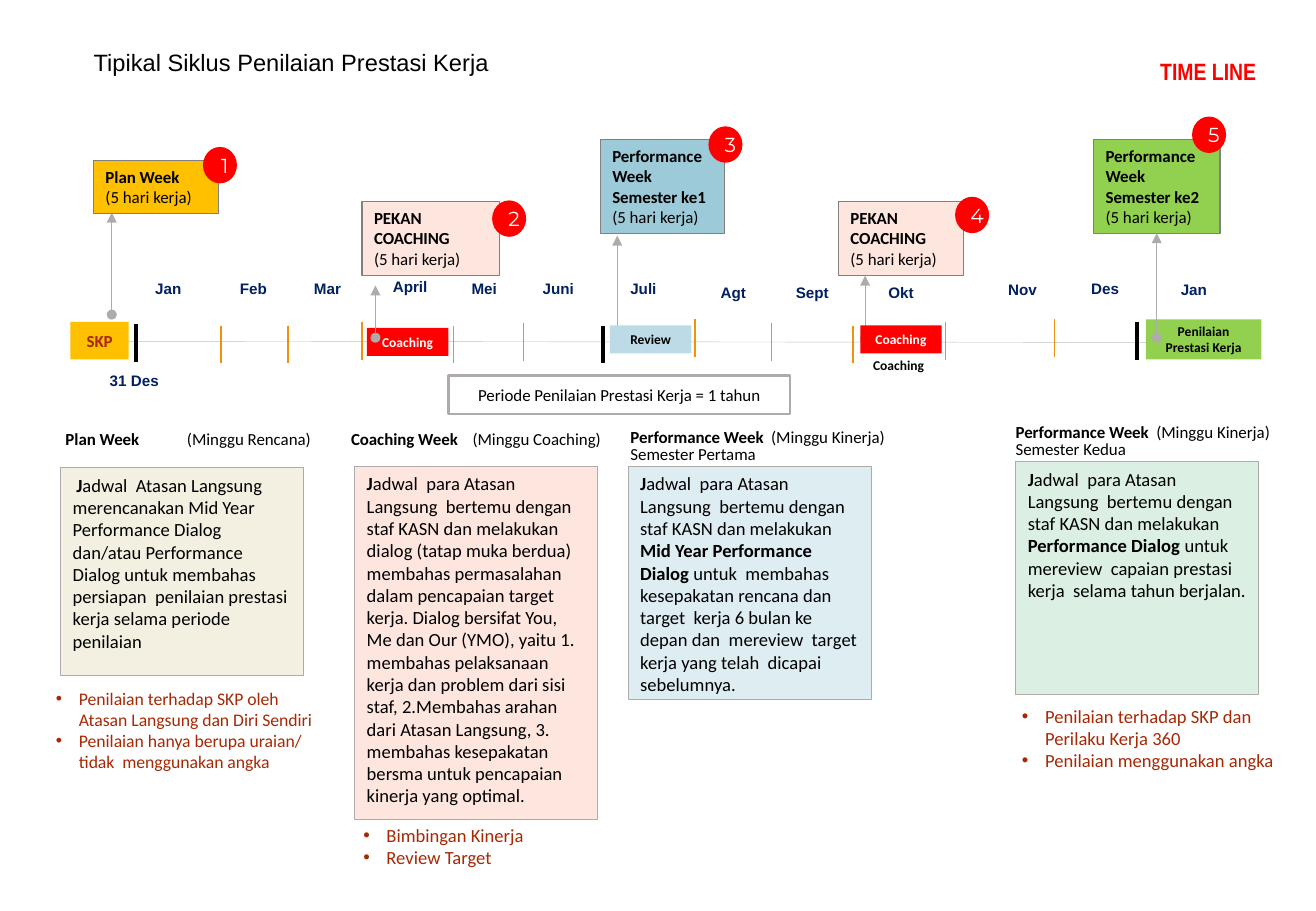
"""Build the yearly performance appraisal timeline slide."""
from itertools import zip_longest
from lxml import etree
from pptx import Presentation
from pptx import util as u
from pptx.dml.color import RGBColor
from pptx.enum import shapes, text
from pptx.oxml import ns

NAVY, RUST, RED, GRAY, ORANGE = "002060", "A62805", "FF0000", "AFABAB", "F0920F"
BLACK, WHITE, AMBER, GREEN, BLUSH = "000000", "FFFFFF", "FFC000", "92D050", "FEE5DE"
TOP, MIDDLE = text.MSO_ANCHOR.TOP, text.MSO_ANCHOR.MIDDLE
LEFT, CENTER = text.PP_ALIGN.LEFT, text.PP_ALIGN.CENTER

TITLE = ("Tipikal Siklus Penilaian Prestasi Kerja", (0.67, 0.34, 4.65, 0.34))
HEADING = ("TIME LINE", (9.45, 0.42, 1, 0.34))
PERIOD = ("Periode Penilaian Prestasi Kerja = 1 tahun", (3.69, 3.09, 2.81, 0.32))
MONTHS = [
    ("Jan", 1.1, 2.25), ("Feb", 1.8, 2.25), ("Mar", 2.41, 2.25), ("April", 3.09, 2.23),
    ("Mei", 3.7, 2.25), ("Juni", 4.31, 2.25), ("Juli", 5.01, 2.25), ("Agt", 5.75, 2.28),
    ("Sept", 6.4, 2.28), ("Okt", 7.13, 2.28), ("Nov", 8.13, 2.26), ("Des", 8.81, 2.25),
    ("Jan", 9.54, 2.26), ("31 Des", 0.82, 3.01),
]
MONTH_TICKS = [
    (1.82, 2.68), (2.37, 2.68), (2.98, 2.65), (3.73, 2.68), (4.31, 2.66), (5.72, 2.63),
    (6.35, 2.66), (7.02, 2.68), (7.78, 2.65), (8.68, 2.63),
]
PERIOD_TICKS = [(1.12, 2.67), (4.96, 2.68), (9.36, 2.65)]
CARDS = [
    (["*Plan Week*"], (0.77, 1.32, 1.03, 0.44), AMBER, (1.67, 1.21)),
    (["*PEKAN COACHING*"], (2.98, 1.66, 1.13, 0.61), BLUSH, (4.05, 1.65)),
    (["*Performance Week Semester ke1*"], (4.94, 1.15, 1.02, 0.77), "9CCAD9", (5.83, 1.04)),
    (["*PEKAN COACHING*"], (6.9, 1.66, 1.03, 0.61), BLUSH, (7.86, 1.62)),
    (["*Performance Week Semester ke2*"], (9, 1.15, 1.04, 0.77), GREEN, (9.81, 0.96)),
]
DAYS = "(5 hari kerja)"
HIDDEN_ARROWS = [(5.08, 2.8, 1.94), (7.12, 2.79, 2.27)]
VISIBLE_ARROWS = [(0.92, 2.59, 1.75), (3.09, 2.78, 2.35)]
FINAL_ARROW = (9.52, 2.78, 1.92)
STAGES = [
    ("SKP", (0.58, 2.65, 0.48, 0.31), AMBER, RUST, 10),
    ("Coaching", (3.02, 2.7, 0.67, 0.23), RED, WHITE, 8),
    ("Review", (5.02, 2.68, 0.67, 0.23), "BDDBE6", BLACK, 8),
    ("Coaching", (7.07, 2.85, 0.65, 0.31), WHITE, BLACK, 8),
    ("Coaching", (7.08, 2.68, 0.67, 0.23), RED, WHITE, 8),
    ("Penilaian Prestasi Kerja", (9.43, 2.63, 0.95, 0.33), GREEN, BLACK, 8),
]
CAPTIONS = [
    ("*Plan Week*\t(Minggu Rencana)", (0.44, 3.48, 1.98, 0.27), 0.74),
    ("*Coaching Week*\t(Minggu Coaching)", (2.79, 3.48, 2.29, 0.27), 1.01),
    ("*Performance Week*  (Minggu Kinerja) Semester Pertama", (5.09, 3.49, 2.33, 0.38), None),
    ("*Performance Week*  (Minggu Kinerja) Semester Kedua", (8.26, 3.45, 2.33, 0.38), None),
]
DETAILS = [
    ("*J*adwal  Atasan Langsung  merencanakan Mid Year Performance Dialog  dan/atau "
     "Performance Dialog untuk membahas  persiapan  penilaian prestasi kerja selama "
     "periode penilaian", (0.5, 3.85, 2, 1.71), "F3F0E1", 0.25, 0.03),
    ("*J*adwal  para Atasan Langsung  bertemu dengan staf KASN dan melakukan dialog "
     "(tatap muka berdua) membahas permasalahan dalam pencapaian target kerja. Dialog "
     "bersifat You, Me dan Our (YMO), yaitu 1. membahas pelaksanaan kerja dan problem "
     "dari sisi staf, 2.Membahas arahan dari Atasan Langsung, 3. membahas kesepakatan "
     "bersma untuk pencapaian kinerja yang optimal.", (2.92, 3.84, 2, 2.91), BLUSH, 0.5, 0),
    ("*J*adwal  para Atasan Langsung  bertemu dengan staf KASN dan melakukan *Mid Year "
     "Performance Dialog* untuk  membahas kesepakatan rencana dan target  kerja 6 bulan ke "
     "depan dan  mereview  target kerja yang telah  dicapai sebelumnya.",
     (5.17, 3.84, 2, 1.92), "DEEDF2", 0.5, 0),
    ("*J*adwal  para Atasan Langsung  bertemu dengan staf KASN dan melakukan *Performance "
     "Dialog* untuk  mereview  capaian prestasi kerja  selama tahun berjalan.",
     (8.36, 3.8, 2, 1.92), "DBEFE3", 0.5, 0),
]
OUTCOMES = [
    (["Penilaian terhadap SKP oleh Atasan Langsung dan Diri Sendiri",
      "Penilaian hanya berupa uraian/ tidak  menggunakan angka"], (0.36, 5.61, 2.43, 0.81), 10.5),
    (["Bimbingan Kinerja", "Review Target"], (2.89, 6.73, 2.28, 0.47), 11),
    (["Penilaian terhadap SKP dan Perilaku Kerja 360", "Penilaian menggunakan angka"],
     (8.31, 5.75, 2.28, 0.66), 11),
]


def color(value):
    return RGBColor.from_string(value)


def inches(values):
    return [u.Inches(value) for value in values]


def apply(target, values):
    for name, value in values.items():
        setattr(target, name, value)


def add_child(parent, tag, **attributes):
    return etree.SubElement(parent, ns.qn(tag), attributes)


def write(shape, lines, size, ink=BLACK, face="Calibri", align=LEFT, anchor=TOP, wrap=True,
          bold=False, bullet=False, tab=None, indent=0, spacing=None):
    """Fill a shape with lines in which asterisks enclose bold words."""
    frame = shape.text_frame
    apply(frame, {"word_wrap": wrap, "vertical_anchor": anchor,
                  "auto_size": text.MSO_AUTO_SIZE.NONE})
    for index, line in enumerate(lines):
        paragraph = frame.paragraphs[0] if index == 0 else frame.add_paragraph()
        properties = paragraph._p.get_or_add_pPr()
        properties.set("marL", str(u.Inches(0.19 if bullet else 0)))
        properties.set("indent", str(u.Inches(-0.19 if bullet else indent)))
        if bullet:
            add_child(properties, "a:buFont", typeface="Arial")
            add_child(properties, "a:buChar", char="•")
        if tab:
            stops = add_child(properties, "a:tabLst")
            add_child(stops, "a:tab", pos=str(u.Inches(tab)), algn="l")
        apply(paragraph, {"alignment": align, "space_before": u.Pt(0), "line_spacing": spacing})
        for part, words in enumerate(line.split("*")):
            if words:
                run = paragraph.add_run()
                run.text = words
                apply(run.font, {"size": u.Pt(size), "name": face, "bold": bold or part % 2 == 1})
                run.font.color.rgb = color(ink)


def add_box(slide, place, fill=None, line=None, weight=0.75, kind=shapes.MSO_SHAPE.RECTANGLE):
    box = slide.shapes.add_shape(kind, *inches(place))
    box.shadow.inherit = False
    for paint, value in ((box.fill, fill), (box.line.fill, line)):
        if value:
            paint.solid()
            paint.fore_color.rgb = color(value)
        else:
            paint.background()
    if line:
        box.line.width = u.Pt(weight)
    return box


def add_line(slide, start, end, ink, weight, head=None, tail=None):
    line = slide.shapes.add_connector(shapes.MSO_CONNECTOR.STRAIGHT, *inches(start + end))
    line.line.color.rgb = color(ink)
    line.line.width = u.Pt(weight)
    for tag, kind in (("a:headEnd", head), ("a:tailEnd", tail)):
        if kind:
            add_child(line.line._ln, tag, type=kind)
    add_child(line._element.spPr, "a:effectLst")
    return line


def add_arrow(slide, x, bottom, top):
    return add_line(slide, (x, bottom), (x, top), GRAY, 0.75, "oval", "triangle")


def add_label(slide, words, place, size, **style):
    write(slide.shapes.add_textbox(*inches(place)), [words], size, **style)


def place_placeholder(holder, place):
    apply(holder, dict(zip(("left", "top", "width", "height"), inches(place))))


def main():
    deck = Presentation()
    apply(deck, {"slide_width": u.Inches(10.83), "slide_height": u.Inches(7.5)})
    slide = deck.slides.add_slide(deck.slide_layouts[4])
    title, *bodies = list(slide.placeholders)
    place_placeholder(title, TITLE[1])
    write(title, [TITLE[0]], 14, face="Arial")
    for body, outcome in zip_longest(bodies, OUTCOMES):
        if outcome:
            points, place, size = outcome
            place_placeholder(body, place)
            write(body, points, size, RUST, bullet=True)
        else:
            body._element.getparent().remove(body._element)

    add_label(slide, *HEADING, 14, ink=RED, face="Arial Narrow", bold=True, wrap=False)
    add_line(slide, (0.75, 2.81), (10.15, 2.82), "BFBFBF", 0.25, tail="triangle")
    for ticks, ink, weight in ((MONTH_TICKS, ORANGE, 0.75), (PERIOD_TICKS, BLACK, 2.25)):
        for x, y in ticks:
            add_line(slide, (x, y), (x, y + 0.31), ink, weight)
    for month, x, y in MONTHS:
        add_label(slide, month, (x, y, 0.57, 0.25), 9, ink=NAVY, face="Arial",
                  align=CENTER, bold=True, wrap=False)

    for arrow in HIDDEN_ARROWS:
        add_arrow(slide, *arrow)
    for name, place, fill, ink, size in STAGES:
        write(add_box(slide, place, fill), [name], size, ink, align=CENTER, anchor=MIDDLE, bold=True)
    for arrow in VISIBLE_ARROWS:
        add_arrow(slide, *arrow)
    for number, (name, place, fill, corner) in enumerate(CARDS, 1):
        card = add_box(slide, place, fill, "808080")
        write(card, name + [DAYS], 10)
        badge = add_box(slide, corner + (0.28, 0.3), RED, kind=shapes.MSO_SHAPE.OVAL)
        apply(badge.text_frame, {"margin_left": u.Inches(0.08), "margin_right": 0,
                                 "margin_top": 0, "margin_bottom": 0})
        write(badge, [str(number)], 12, WHITE, "Montserrat", CENTER, MIDDLE, wrap=False)
    add_arrow(slide, *FINAL_ARROW).end_connect(card, 2)

    write(add_box(slide, PERIOD[1], line=GRAY, weight=1.5), [PERIOD[0]], 10,
          align=CENTER, anchor=MIDDLE)
    for caption, place, tab in CAPTIONS:
        add_label(slide, caption, place, 10, tab=tab, wrap=tab is None,
                  spacing=None if tab else u.Pt(10))
    for detail, place, fill, weight, indent in DETAILS:
        write(add_box(slide, place, fill, GRAY, weight), [detail], 11, indent=indent)
    deck.save("out.pptx")


if __name__ == "__main__":
    main()
